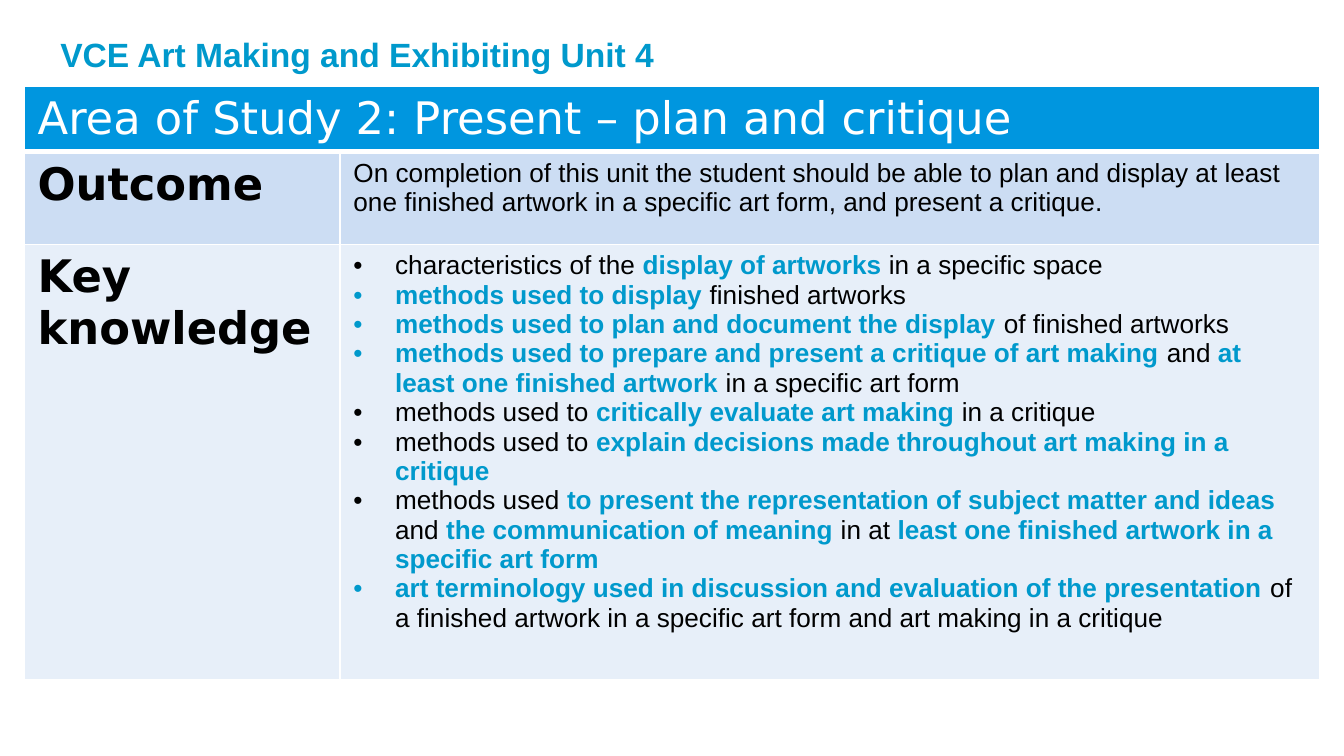
"""Build the Unit 4 slide: a heading above a table of outcome and key knowledge."""
from lxml.etree import SubElement
from pptx import Presentation
from pptx.dml.color import RGBColor as Color
from pptx.enum.text import MSO_AUTO_SIZE as AutoSize
from pptx.oxml.ns import qn
from pptx.util import Inches, Pt

THEME = {
    "heading": {"name": "Arial", "size": Pt(18), "bold": True, "color": "0099CC"},
    "banner": {"name": "DejaVu Sans", "size": Pt(24), "bold": False, "color": "FFFFFF"},
    "label": {"name": "DejaVu Sans", "size": Pt(24), "bold": True, "color": "000000"},
    "body": {"name": "Arial", "size": Pt(14), "bold": False, "color": "000000"},
    "key": {"name": "Arial", "size": Pt(14), "bold": True, "color": "0099CC"},
    "fills": ["0096DF", "CCDDF3", "E7EFF9"],
    "border": "FFFFFF",
}
COLUMNS = [2.35, 7.29]
ROWS = [0.41, 0.69, 3.24]
INDENT = Inches(0.31)
OUTCOME = (
    "On completion of this unit the student should be able to plan and display at least "
    "one finished artwork in a specific art form, and present a critique."
)
KEY_KNOWLEDGE = [
    "characteristics of the *display of artworks *in a specific space",
    "*methods used to display *finished artworks",
    "*methods used to plan and document the display *of finished artworks",
    "*methods used to prepare and present a critique of art making *and "
    "*at least one finished artwork *in a specific art form",
    "methods used to *critically evaluate art making *in a critique",
    "methods used to *explain decisions made throughout art making in a critique*",
    "methods used *to present the representation of subject matter and ideas *and "
    "*the communication of meaning *in at *least one finished artwork in a specific art form*",
    "*art terminology used in discussion and evaluation of the presentation*"
    " of a finished artwork in a specific art form and art making in a critique",
]


def add_text(paragraph, text, style, marked="key"):
    """Add runs to a paragraph, with the parts between asterisks in the marked style."""
    for index, part in enumerate(text.split("*")):
        if part:
            run = paragraph.add_run()
            run.text = part
            for name, value in THEME[marked if index % 2 else style].items():
                if name == "color":
                    run.font.color.rgb = Color.from_string(value)
                else:
                    setattr(run.font, name, value)


presentation = Presentation()
presentation.slide_width = Inches(10)
presentation.slide_height = presentation.slide_width * 9 // 16
slide = presentation.slides.add_slide(presentation.slide_layouts[6])

table = slide.shapes.add_table(
    len(ROWS), len(COLUMNS), Inches(0.18), Inches(0.64), Inches(sum(COLUMNS)), Inches(sum(ROWS))
).table
for column, width in zip(table.columns, COLUMNS):
    column.width = Inches(width)
for row, height in zip(table.rows, ROWS):
    row.height = Inches(height)
table.cell(0, 0).merge(table.cell(0, 1))

for row_index, fill in enumerate(THEME["fills"]):
    for cell in table.rows[row_index].cells:
        properties = cell._tc.get_or_add_tcPr()
        for side in "LRTB":
            weight = Pt(3 if (row_index, side) == (0, "B") else 1)
            line = SubElement(properties, qn(f"a:ln{side}"), w=str(weight))
            SubElement(SubElement(line, qn("a:solidFill")), qn("a:srgbClr"), val=THEME["border"])
        cell.fill.solid()
        cell.fill.fore_color.rgb = Color.from_string(fill)

for row_index, column_index, text, style in [
    (0, 0, "Area of Study 2: Present – plan and critique", "banner"),
    (1, 0, "Outcome", "label"),
    (1, 1, OUTCOME, "body"),
    (2, 0, "Key knowledge", "label"),
]:
    add_text(table.cell(row_index, column_index).text_frame.paragraphs[0], text, style)

knowledge_frame = table.cell(2, 1).text_frame
for index, point in enumerate(KEY_KNOWLEDGE):
    paragraph = knowledge_frame.add_paragraph() if index else knowledge_frame.paragraphs[0]
    properties = paragraph._p.get_or_add_pPr()
    for name, value in {"marL": INDENT, "indent": -INDENT}.items():
        properties.set(name, str(value))
    SubElement(properties, qn("a:buFont"), typeface="Arial")
    SubElement(properties, qn("a:buChar"), char="•")
    add_text(paragraph, point, "body")

heading = slide.shapes.add_textbox(Inches(0.35), Inches(0.2), Inches(7.01), Inches(0.4))
for name, value in {"word_wrap": True, "auto_size": AutoSize.SHAPE_TO_FIT_TEXT}.items():
    setattr(heading.text_frame, name, value)
add_text(heading.text_frame.paragraphs[0], "VCE Art Making and Exhibiting Unit 4", "heading")

presentation.save("out.pptx")
